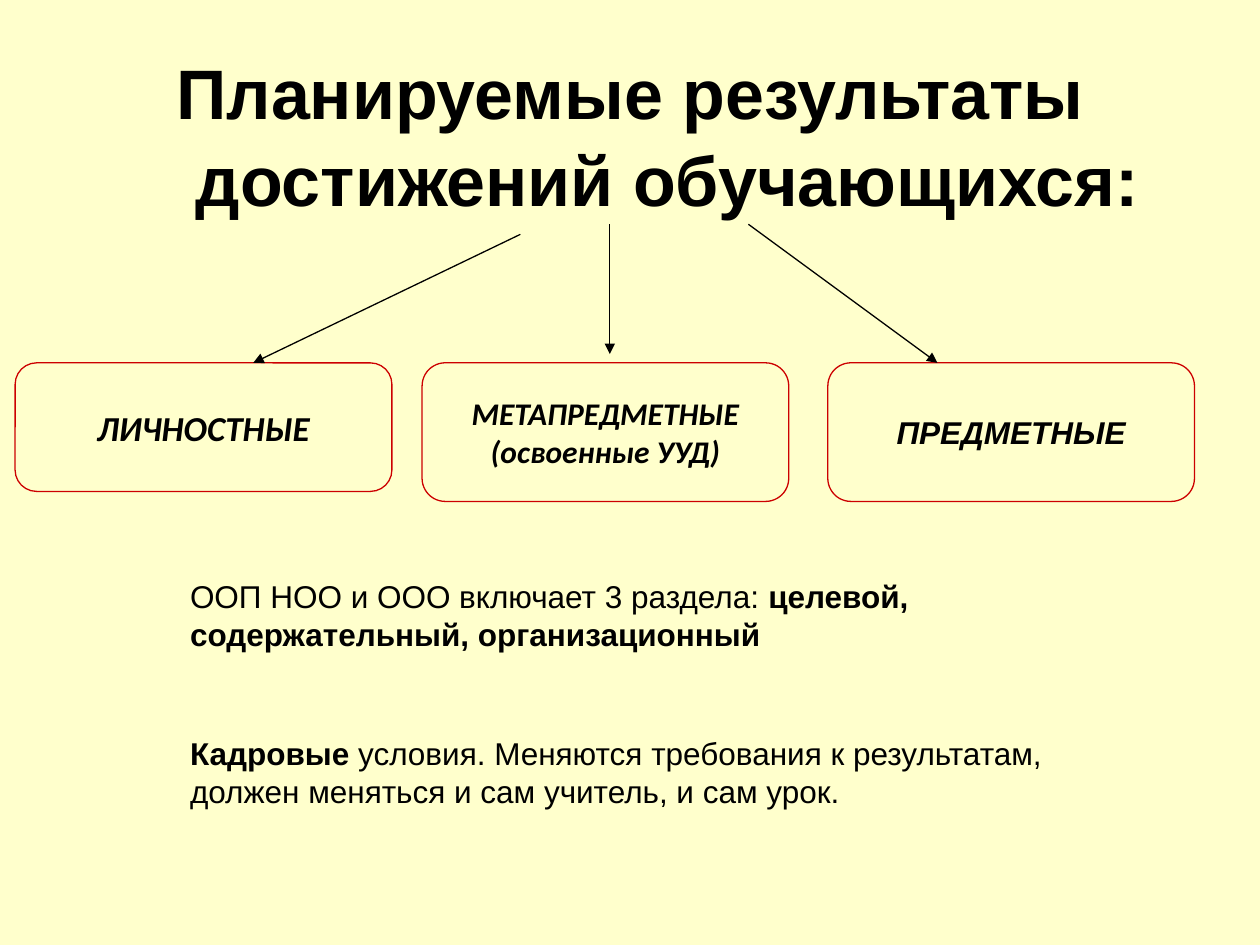
from pptx import Presentation
from pptx.dml.color import RGBColor
from pptx.enum.shapes import MSO_CONNECTOR as Conn, MSO_SHAPE as Shape
from pptx.enum.text import MSO_ANCHOR as Anchor, MSO_AUTO_SIZE as Fit, PP_ALIGN as Align
from pptx.oxml.ns import qn
from pptx.util import Inches, Pt
from lxml.etree import SubElement


def rgb(color):
    return RGBColor.from_string(color)


class Deck:
    BACKGROUND, INK, BORDER = "FFFFCC", "000000", "CC0000"
    FONT, BOX_FONT = "Arial", "Calibri"
    LINE = 0.75

    def __init__(self, width, height):
        self.prs = Presentation()
        self.prs.slide_width, self.prs.slide_height = Inches(width), Inches(height)

    def add_slide(self):
        self.s = self.prs.slides.add_slide(self.prs.slide_layouts[5])
        fill = self.s.background.fill
        fill.solid()
        fill.fore_color.rgb = rgb(self.BACKGROUND)

    def style(self, r, size, bold=False, italic=False, font=FONT):
        f = r.font
        f.name, f.size, f.bold, f.italic = font, Pt(size), bold, italic
        f.color.rgb = rgb(self.INK)

    def title(self, text, x, y, w, h, size=40):
        sp = self.s.shapes.title
        sp.left, sp.top, sp.width, sp.height = map(Inches, (x, y, w, h))
        tf = sp.text_frame
        tf.text = text
        tf.word_wrap, tf.auto_size = True, Fit.NONE
        tf.vertical_anchor, tf.margin_top = Anchor.TOP, Inches(0.11)
        for p in tf.paragraphs:
            p.alignment = Align.LEFT
            p.space_before = Pt(2)
            for r in p.runs:
                self.style(r, size, bold=True)

    def box(self, text, x, y, w, h, size, font):
        sp = self.s.shapes.add_shape(Shape.ROUNDED_RECTANGLE, *map(Inches, (x, y, w, h)))
        sp.shadow.inherit = False
        sp.fill.background()
        sp.line.color.rgb, sp.line.width = rgb(self.BORDER), Pt(self.LINE)
        tf = sp.text_frame
        tf.text = text
        tf.word_wrap, tf.vertical_anchor = False, Anchor.MIDDLE
        for p in tf.paragraphs:
            p.alignment = Align.CENTER
            for r in p.runs:
                self.style(r, size, bold=True, italic=True, font=font)

    def arrow(self, start, end):
        cn = self.s.shapes.add_connector(Conn.STRAIGHT, *map(Inches, start + end))
        cn.line.color.rgb, cn.line.width = rgb(self.INK), Pt(self.LINE)
        SubElement(cn.line._get_or_add_ln(), qn("a:tailEnd"), type="triangle")
        SubElement(cn._element.spPr, qn("a:effectLst"))

    def note(self, parts, x, y, w, h, size=18):
        tf = self.s.shapes.add_textbox(*map(Inches, (x, y, w, h))).text_frame
        tf.word_wrap = True
        p = tf.paragraphs[0]
        for text, bold in parts:
            r = p.add_run()
            r.text = text
            self.style(r, size, bold)


def main():
    deck = Deck(10, 7.5)
    deck.add_slide()
    deck.title("Планируемые результаты\n достижений обучающихся:", 1.3, 0.28, 7.88, 1.73)

    box_top = 2.88
    for text, x, w, h, size, font in (
        ("ЛИЧНОСТНЫЕ", 0.12, 2.99, 1.02, 20, deck.BOX_FONT),
        ("МЕТАПРЕДМЕТНЫЕ\n(освоенные УУД)", 3.35, 2.91, 1.1, 18, deck.BOX_FONT),
        ("ПРЕДМЕТНЫЕ", 6.57, 2.91, 1.1, 18, deck.FONT),
    ):
        deck.box(text, x, box_top, w, h, size, font)

    for start, end in (
        ((4.13, 1.86), (2.01, box_top)),
        ((4.84, 1.78), (4.84, 2.81)),
        ((5.94, 1.78), (7.44, box_top)),
    ):
        deck.arrow(start, end)

    sections = (
        ("ООП НОО и ООО включает 3 раздела: ", False),
        ("целевой, содержательный, организационный", True),
    )
    staff = (
        ("Кадровые", True),
        (" условия. Меняются требования к результатам, "
         "должен меняться и сам учитель, и сам урок.", False),
    )
    for parts, y in ((sections, 4.53), (staff, 5.78)):
        deck.note(parts, 1.41, y, 7.81, 0.71)

    deck.prs.save("out.pptx")


if __name__ == "__main__":
    main()
